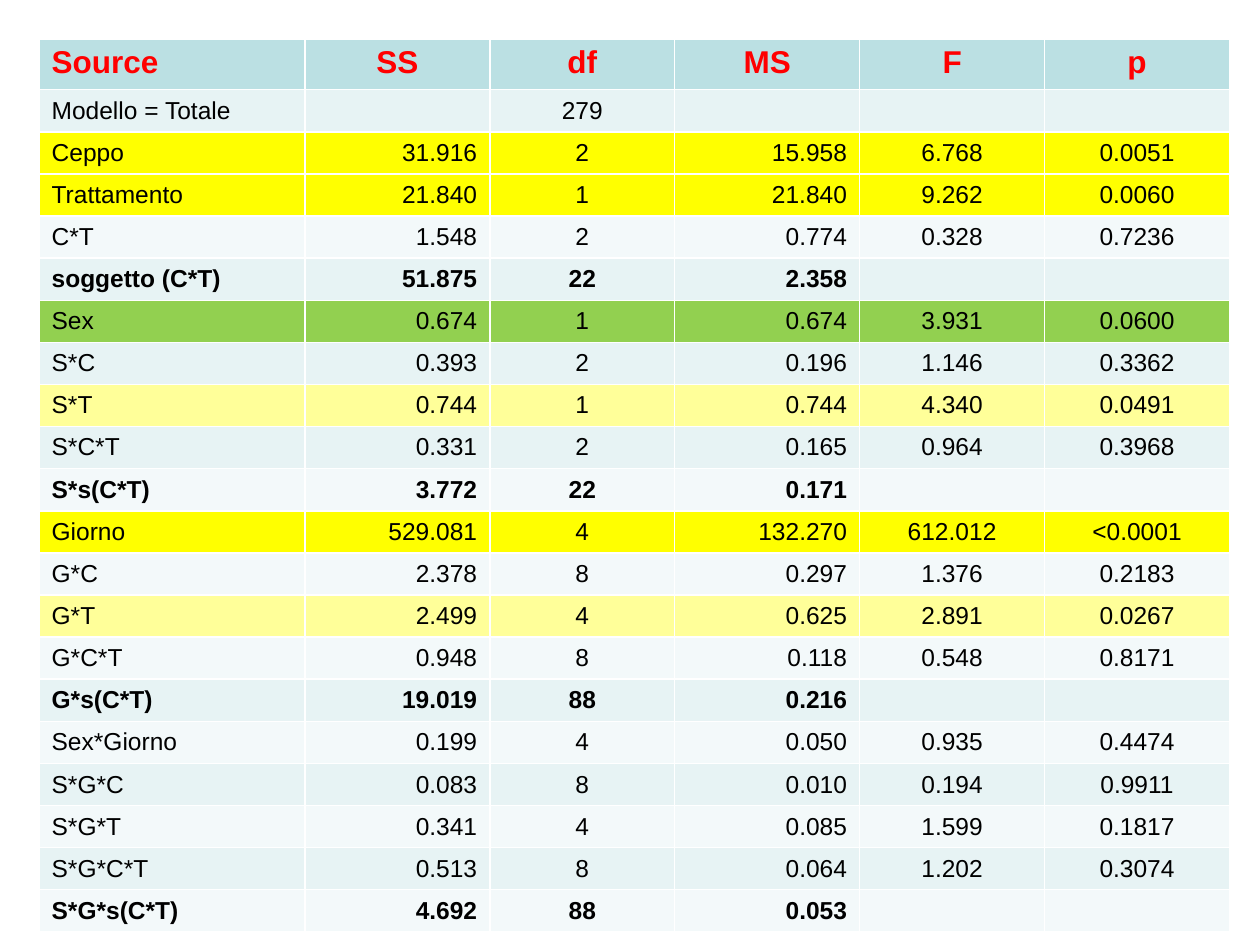
"""Build a slide with the analysis of variance table for Ceppo, Trattamento, Sex and Giorno."""
from lxml import etree
from pptx import Presentation
from pptx import util as u
from pptx.dml.color import RGBColor
from pptx.enum import text
from pptx.oxml.ns import qn

COLOURS = {
    "header": "BBE0E3", "odd": "E7F3F4", "even": "F3F9FA",
    "strong": "FFFF00", "weak": "FFFF99", "trend": "92D050",
    "heading": "FF0000", "body": "000000",
}
HEADINGS = ["Source", "SS", "df", "MS", "F", "p"]
EFFECTS = [
    ["Modello = Totale", "", "279", "", "", ""],
    ["Ceppo", "31.916", "2", "15.958", "6.768", "0.0051"],
    ["Trattamento", "21.840", "1", "21.840", "9.262", "0.0060"],
    ["C*T", "1.548", "2", "0.774", "0.328", "0.7236"],
    ["soggetto (C*T)", "51.875", "22", "2.358", "", ""],
    ["Sex", "0.674", "1", "0.674", "3.931", "0.0600"],
    ["S*C", "0.393", "2", "0.196", "1.146", "0.3362"],
    ["S*T", "0.744", "1", "0.744", "4.340", "0.0491"],
    ["S*C*T", "0.331", "2", "0.165", "0.964", "0.3968"],
    ["S*s(C*T)", "3.772", "22", "0.171", "", ""],
    ["Giorno", "529.081", "4", "132.270", "612.012", "<0.0001"],
    ["G*C", "2.378", "8", "0.297", "1.376", "0.2183"],
    ["G*T", "2.499", "4", "0.625", "2.891", "0.0267"],
    ["G*C*T", "0.948", "8", "0.118", "0.548", "0.8171"],
    ["G*s(C*T)", "19.019", "88", "0.216", "", ""],
    ["Sex*Giorno", "0.199", "4", "0.050", "0.935", "0.4474"],
    ["S*G*C", "0.083", "8", "0.010", "0.194", "0.9911"],
    ["S*G*T", "0.341", "4", "0.085", "1.599", "0.1817"],
    ["S*G*C*T", "0.513", "8", "0.064", "1.202", "0.3074"],
    ["S*G*s(C*T)", "4.692", "88", "0.053", "", ""],
]
HIGHLIGHTS = {
    "Ceppo": "strong", "Trattamento": "strong", "Giorno": "strong",
    "S*T": "weak", "G*T": "weak", "Sex": "trend",
}
LEFT, CENTRE, RIGHT = text.PP_ALIGN.LEFT, text.PP_ALIGN.CENTER, text.PP_ALIGN.RIGHT
ALIGNMENTS = [LEFT, RIGHT, CENTRE, RIGHT, CENTRE, CENTRE]

deck = Presentation()
deck.slide_width, deck.slide_height = u.Inches(10), u.Inches(7.5)
slide = deck.slides.add_slide(deck.slide_layouts[6])

margin, width, height = u.Inches(0.31), u.Inches(9.45), u.Inches(7.07)
source_width, heading_height = u.Inches(2.11), u.Inches(0.4)
anova = slide.shapes.add_table(
    len(EFFECTS) + 1, len(HEADINGS), margin, margin, width, height).table
for index, column in enumerate(anova.columns):
    column.width = (width - source_width) // (len(HEADINGS) - 1) if index else source_width
for index, row in enumerate(anova.rows):
    row.height = (height - heading_height) // len(EFFECTS) if index else heading_height

for row, values in enumerate([HEADINGS] + EFFECTS):
    is_heading = row == 0
    is_error_term = values[0].endswith("(C*T)")
    band = "header" if is_heading else HIGHLIGHTS.get(values[0], "odd" if row % 2 else "even")
    size = 18 if is_heading else 14
    for column, value in enumerate(values):
        cell = anova.cell(row, column)
        cell.fill.solid()
        cell.fill.fore_color.rgb = RGBColor.from_string(COLOURS[band])
        cell.vertical_anchor = text.MSO_ANCHOR.TOP if is_heading else text.MSO_ANCHOR.MIDDLE
        paragraph = cell.text_frame.paragraphs[0]
        if not value:
            etree.SubElement(paragraph._p, qn("a:endParaRPr"), sz=str(size * 100))
            continue
        paragraph.text = value
        paragraph.alignment = CENTRE if is_heading and column else ALIGNMENTS[column]
        font = paragraph.runs[0].font
        font.name, font.size = "Arial", u.Pt(size)
        font.bold = is_heading or is_error_term
        font.color.rgb = RGBColor.from_string(COLOURS["heading" if is_heading else "body"])

deck.save("out.pptx")
